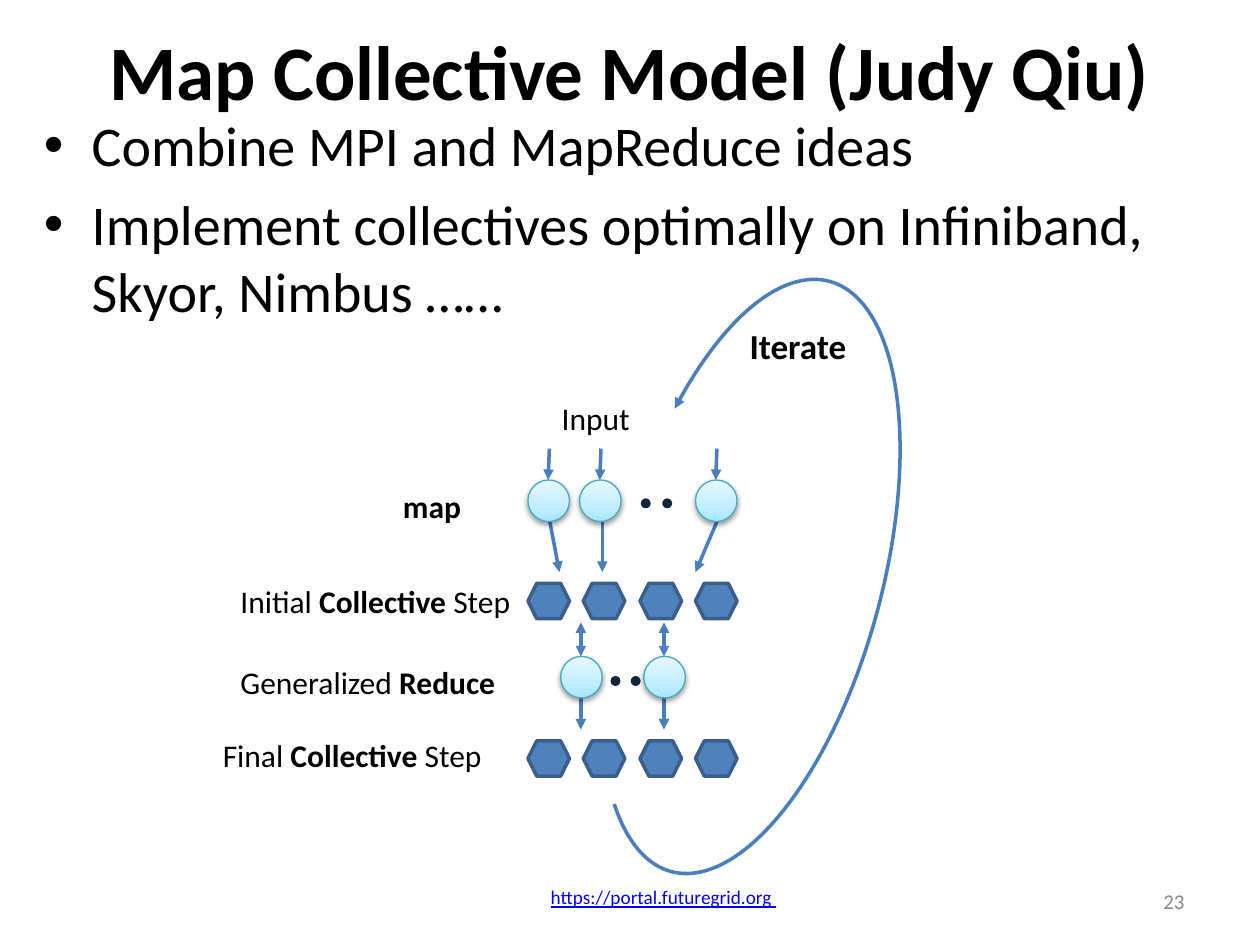
from dataclasses import dataclass

from lxml.etree import SubElement
from pptx import Presentation
from pptx.dml.color import RGBColor
from pptx.enum.shapes import MSO_CONNECTOR, MSO_SHAPE as Preset
from pptx.enum.text import MSO_ANCHOR as Anchor, MSO_AUTO_SIZE as AutoSize, PP_ALIGN as Align
from pptx.oxml import parse_xml
from pptx.oxml.ns import nsdecls, qn
from pptx.util import Emu, Pt

PX = 9144  # EMU in one px, 100 px to the inch


@dataclass(frozen=True)
class Theme:
    font: str = "Calibri"
    text: str = "000000"
    link: str = "0000FF"
    muted: str = "898989"
    arrow: str = "4B7EBC"
    hexagon: str = "4F81BD"
    hexagon_line: str = "3A5F8C"
    dot: str = "0F243E"
    task_line: str = "46AAC5"
    task_stops: tuple = ((0, "A7E6FF"), (35, "C1EDFF"), (100, "E7F8FF"))
    title_size: int = 44
    body_size: int = 32
    iterate_size: int = 20
    label_size: int = 18
    number_size: int = 12
    link_size: int = 11
    line: int = 2
    task_line_width: float = 0.75


THEME = Theme()


@dataclass(frozen=True)
class Label:
    left: int
    top: int
    width: int
    height: int
    spans: tuple  # (text, bold) pairs
    size: int = THEME.label_size
    color: str = THEME.text
    align: Align = Align.LEFT
    anchor: Anchor = Anchor.TOP
    wrap: bool = True
    underline: bool = False


@dataclass(frozen=True)
class Arrow:
    start: tuple
    end: tuple
    both_ways: bool = False


MIDDLE = Anchor.MIDDLE
HEADINGS = (
    Label(344, 692, 365, 40, (("https://portal.futuregrid.org ", False),), THEME.link_size,
          THEME.link, Align.CENTER, MIDDLE, underline=True),
    Label(50, 2, 900, 107, (("Map Collective Model (Judy Qiu)", True),), THEME.title_size,
          align=Align.CENTER, anchor=MIDDLE),
    Label(717, 695, 233, 40, (("23", False),), THEME.number_size, THEME.muted,
          Align.RIGHT, MIDDLE),
)
DIAGRAM_LABELS = (
    Label(436, 312, 75, 40, (("Input", False),), wrap=False),
    Label(310, 382, 67, 40, (("map", True),), wrap=False),
    Label(181, 457, 235, 40,
          (("Initial ", False), ("Collective ", True), ("Step", False)), wrap=False),
    Label(181, 521, 225, 40, (("Generalized ", False), ("Reduce", True))),
    Label(167, 579, 226, 40,
          (("Final ", False), ("Collective", True), (" Step", False)), wrap=False),
    Label(585, 253, 98, 44, (("Iterate", True),), THEME.iterate_size, wrap=False),
)
BULLETS = ("Combine MPI and MapReduce ideas",
           "Implement collectives optimally on Infiniband, Skyor, Nimbus ……")

TASK, DOT, HEX_WIDTH, HEX_HEIGHT = 33, 5, 33, 28
MAP_TOP, REDUCE_TOP = 381, 521
MAP_LEFTS, REDUCE_LEFTS = (419, 460, 552), (445, 511)
DOTS = ((510, 397), (527, 397), (486, 538), (502, 538))
HEX_LEFTS = (419, 463, 508, 552)
HEX_TOPS = (463, 588)
MAP_OUTPUTS = (((436, 412), (444, 454)), ((478, 412), (478, 454)), ((569, 414), (552, 454)))


def rgb(color: str) -> RGBColor:
    return RGBColor.from_string(color)


def frame(left: int, top: int, width: int, height: int) -> list[Emu]:
    return [Emu(value * PX) for value in (left, top, width, height)]


def style_span(span, size: int, color: str, bold: bool = False, underline: bool = False) -> None:
    span.font.name, span.font.size = THEME.font, Pt(size)
    span.font.bold, span.font.underline = bold, underline
    span.font.color.rgb = rgb(color)


def add_label(page, label: Label, grow: bool = False) -> None:
    box = page.shapes.add_textbox(*frame(label.left, label.top, label.width, label.height))
    text = box.text_frame
    text.word_wrap = label.wrap
    text.auto_size = AutoSize.SHAPE_TO_FIT_TEXT if grow else AutoSize.NONE
    text.vertical_anchor = label.anchor
    para = text.paragraphs[0]
    para.alignment = label.align
    for words, bold in label.spans:
        span = para.add_run()
        span.text = words
        style_span(span, label.size, label.color, bold, label.underline)


def add_bullets(page) -> None:
    text = page.shapes.add_textbox(*frame(25, 83, 900, 75)).text_frame
    text.word_wrap = True
    text.text = "\n".join(BULLETS)
    for index, para in enumerate(text.paragraphs):
        props = para._p.get_or_add_pPr()
        props.set("marL", str(38 * PX))
        props.set("indent", str(-38 * PX))
        SubElement(props, qn("a:buFont")).set("typeface", "Arial")
        SubElement(props, qn("a:buChar")).set("char", "•")
        para.space_before = Pt(0.2 * THEME.body_size if index else 0)
        style_span(para.runs[0], THEME.body_size, THEME.text)


def style_line(line, head: bool, tail: bool) -> None:
    line.color.rgb = rgb(THEME.arrow)
    line.width = Pt(THEME.line)
    for wanted, tag in ((head, "a:headEnd"), (tail, "a:tailEnd")):
        if wanted:
            SubElement(line._get_or_add_ln(), qn(tag)).set("type", "triangle")


def add_arrow(page, arrow: Arrow) -> None:
    ends = [Emu(value * PX) for value in arrow.start + arrow.end]
    connector = page.shapes.add_connector(MSO_CONNECTOR.STRAIGHT, *ends)
    style_line(connector.line, arrow.both_ways, True)
    SubElement(connector._element.spPr, qn("a:effectLst"))


def add_solid(page, preset: Preset, box: tuple, fill: str, line: str):
    shape = page.shapes.add_shape(preset, *frame(*box))
    shape.shadow.inherit = False
    shape.fill.solid()
    shape.fill.fore_color.rgb = rgb(fill)
    shape.line.color.rgb = rgb(line)
    shape.line.width = Pt(THEME.line)
    return shape


def add_task(page, left: int, top: int) -> None:
    """Draw a shaded circle with a soft shadow below it."""
    circle = add_solid(page, Preset.OVAL, (left, top, TASK, TASK),
                       THEME.task_stops[0][1], THEME.task_line)
    circle.line.width = Pt(THEME.task_line_width)
    stops = "".join(f'<a:gs pos="{place * 1000}"><a:srgbClr val="{color}"/></a:gs>'
                    for place, color in THEME.task_stops)
    props = circle._element.spPr
    props.replace(props.find(qn("a:solidFill")), parse_xml(
        f'<a:gradFill {nsdecls("a")} rotWithShape="1"><a:gsLst>{stops}</a:gsLst>'
        '<a:lin ang="16200000" scaled="0"/></a:gradFill>'))
    props.find(qn("a:effectLst")).append(parse_xml(
        f'<a:outerShdw {nsdecls("a")} blurRad="{Pt(3.1)}" dist="{Pt(1.6)}" dir="5400000" '
        'rotWithShape="0"><a:srgbClr val="000000"><a:alpha val="38000"/></a:srgbClr>'
        '</a:outerShdw>'))


def add_iteration_loop(page) -> None:
    arc = page.shapes.add_shape(Preset.ARC, *frame(491, 215, 209, 485))
    arc.shadow.inherit = False
    arc.rotation = 15
    arc.adjustments[0], arc.adjustments[1] = 138.44, 63.52
    arc.fill.background()
    style_line(arc.line, True, False)


def diagram_arrows() -> list[Arrow]:
    arrows = [Arrow((left + 17, 356), (left + 16, MAP_TOP)) for left in MAP_LEFTS]
    arrows += [Arrow(start, end) for start, end in MAP_OUTPUTS]
    for left in REDUCE_LEFTS:
        center, bottom = left + TASK // 2, REDUCE_TOP + TASK
        arrows.append(Arrow((center, 494), (center, REDUCE_TOP), both_ways=True))
        arrows.append(Arrow((center, bottom), (center, bottom + 25)))
    return arrows


def main() -> None:
    deck = Presentation()
    deck.slide_width, deck.slide_height = Emu(1000 * PX), Emu(750 * PX)
    page = deck.slides.add_slide(deck.slide_layouts[6])
    for label in HEADINGS:
        add_label(page, label)
    add_bullets(page)
    add_iteration_loop(page)
    for arrow in diagram_arrows():
        add_arrow(page, arrow)
    for lefts, top in ((MAP_LEFTS, MAP_TOP), (REDUCE_LEFTS, REDUCE_TOP)):
        for left in lefts:
            add_task(page, left, top)
    for left, top in DOTS:
        add_solid(page, Preset.OVAL, (left, top, DOT, DOT), THEME.dot, THEME.dot)
    for top in HEX_TOPS:
        for left in HEX_LEFTS:
            add_solid(page, Preset.HEXAGON, (left, top, HEX_WIDTH, HEX_HEIGHT),
                      THEME.hexagon, THEME.hexagon_line)
    for label in DIAGRAM_LABELS:
        add_label(page, label, grow=True)
    deck.save("out.pptx")


if __name__ == "__main__":
    main()
